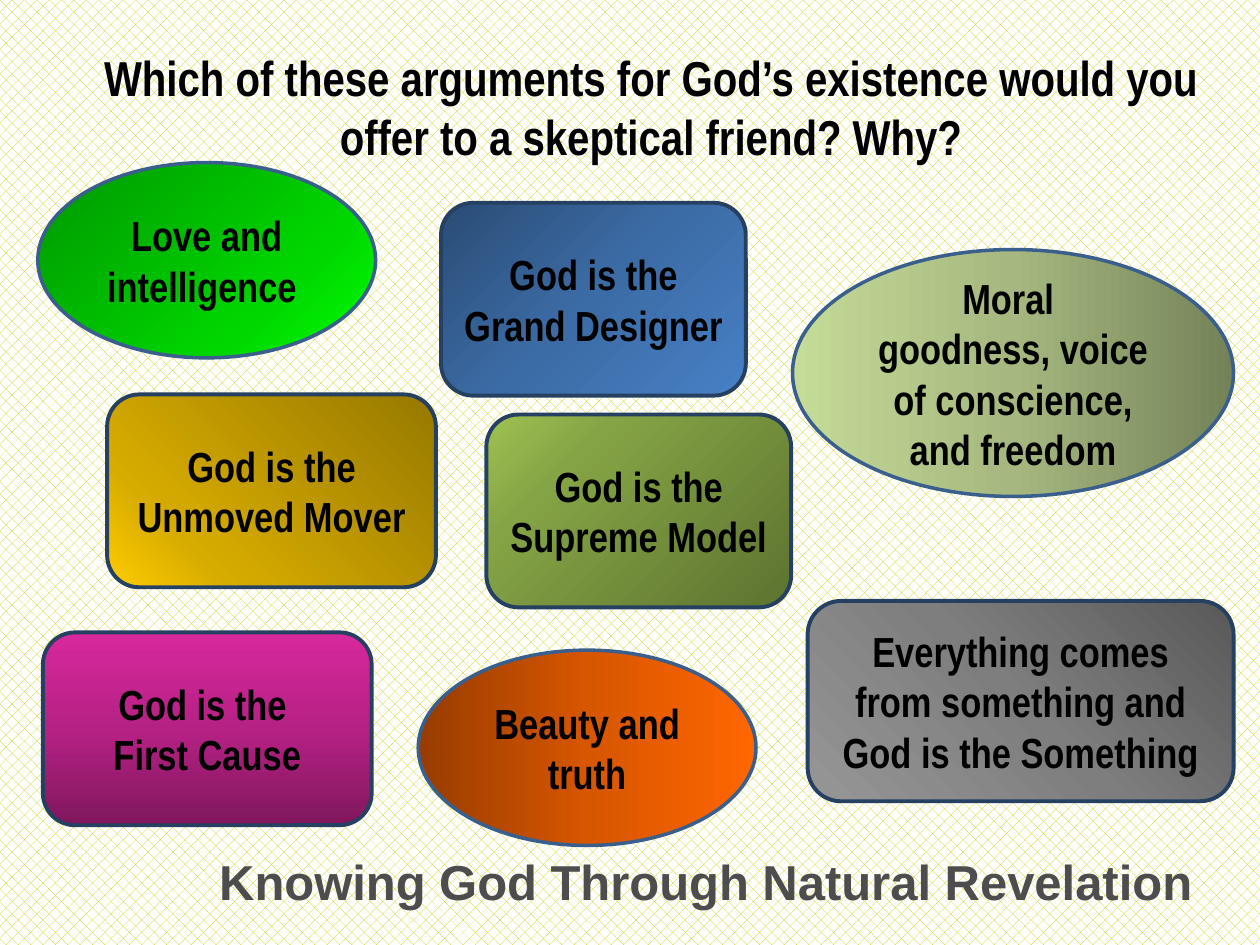
from lxml.etree import SubElement
from pptx import Presentation
from pptx.dml.color import RGBColor
from pptx.enum.dml import MSO_PATTERN
from pptx.enum.shapes import MSO_SHAPE
from pptx.enum.text import MSO_ANCHOR, MSO_AUTO_SIZE, PP_ALIGN
from pptx.oxml.ns import qn
from pptx.util import Pt

BLACK = RGBColor(0x00, 0x00, 0x00)
WHITE = RGBColor(0xFF, 0xFF, 0xFF)
GREY = RGBColor(0x4D, 0x4D, 0x4D)
HATCH = RGBColor(0xCC, 0xCC, 0x00)
NAVY = RGBColor(0x25, 0x40, 0x61)
STEEL = RGBColor(0x3A, 0x5F, 0x8C)

# Gradients: (position in percent, colour) from first to last stop
BLUE = [(0, RGBColor(0x2A, 0x4C, 0x75)), (50, RGBColor(0x3C, 0x6C, 0xA6)),
        (100, RGBColor(0x47, 0x80, 0xC5))]
GOLD = [(0, RGBColor(0x97, 0x79, 0x00)), (76, RGBColor(0xD7, 0xAC, 0x00)),
        (100, RGBColor(0xFF, 0xCC, 0x00))]
OLIVE = [(0, RGBColor(0x5D, 0x73, 0x30)), (74, RGBColor(0x85, 0xA4, 0x45)),
         (100, RGBColor(0x9E, 0xC2, 0x52))]
SILVER = [(0, RGBColor(0x59, 0x59, 0x59)), (50, RGBColor(0x7E, 0x7E, 0x7E)),
          (100, RGBColor(0x96, 0x96, 0x96))]
MAGENTA = [(0, RGBColor(0x80, 0x17, 0x5D)), (50, RGBColor(0xB6, 0x21, 0x84)),
           (100, RGBColor(0xD7, 0x28, 0x9D))]
ORANGE = [(0, RGBColor(0x97, 0x3C, 0x00)), (50, RGBColor(0xD7, 0x56, 0x00)),
          (100, RGBColor(0xFF, 0x66, 0x00))]
SAGE = [(0, RGBColor(0x74, 0x82, 0x59)), (50, RGBColor(0xA6, 0xB8, 0x7F)),
        (100, RGBColor(0xC5, 0xDB, 0x97))]
GREEN = [(0, RGBColor(0x00, 0x97, 0x00)), (70, RGBColor(0x00, 0xD7, 0x00)),
         (100, RGBColor(0x00, 0xFF, 0x00))]


class Painter:
    """Holds the style and the slide being filled."""

    heading = {"name": "Arial Narrow", "size": Pt(28), "bold": True}
    label = {"name": "Arial Narrow", "size": Pt(24), "bold": True}
    footer = {"name": "Arial", "size": Pt(28), "bold": True}
    outlines = {MSO_SHAPE.ROUNDED_RECTANGLE: (NAVY, 2.25),
                MSO_SHAPE.OVAL: (STEEL, 2)}

    def __init__(self, slide):
        self.slide = slide

    def background(self, fore, back):
        fill = self.slide.background.fill
        fill.patterned()
        fill.pattern = MSO_PATTERN.PERCENT_30
        fill.fore_color.rgb = fore
        fill.back_color.rgb = back

    def fill_text(self, frame, text, style, color, align):
        frame.word_wrap = True
        para = frame.paragraphs[0]
        para.text = text
        para.alignment = align
        for span in para.runs:
            for name, value in style.items():
                setattr(span.font, name, value)
            span.font.color.rgb = color
        return para

    def text(self, place, text, style, color, align):
        box = self.slide.shapes.add_textbox(*map(Pt, place))
        box.text_frame.auto_size = MSO_AUTO_SIZE.SHAPE_TO_FIT_TEXT
        return self.fill_text(box.text_frame, text, style, color, align)

    def outline_text(self, para, color, width):
        for span in para.runs:
            properties = span._r.get_or_add_rPr()
            line = SubElement(properties, qn("a:ln"), w=str(Pt(width)))
            solid = SubElement(line, qn("a:solidFill"))
            SubElement(solid, qn("a:srgbClr"), val=str(color))
            properties.insert(0, line)

    def gradient(self, shape, stops, angle):
        """Linear gradient, clockwise; without an angle, round from top left."""
        shape.fill.gradient()
        fill = shape._element.spPr.find(qn("a:gradFill"))
        for child in list(fill):
            fill.remove(child)
        stop_list = SubElement(fill, qn("a:gsLst"))
        for position, color in stops:
            stop = SubElement(stop_list, qn("a:gs"), pos=str(position * 1000))
            SubElement(stop, qn("a:srgbClr"), val=str(color))
        if angle is None:
            circle = SubElement(fill, qn("a:path"), path="circle")
            SubElement(circle, qn("a:fillToRect"), r="100000", b="100000")
        else:
            SubElement(fill, qn("a:lin"), ang=str(angle * 60000), scaled="0")

    def argument(self, kind, place, text, stops, angle):
        shape = self.slide.shapes.add_shape(kind, *map(Pt, place))
        shape.shadow.inherit = False
        self.gradient(shape, stops, angle)
        color, width = self.outlines[kind]
        shape.line.color.rgb = color
        shape.line.width = Pt(width)
        shape.text_frame.vertical_anchor = MSO_ANCHOR.MIDDLE
        self.fill_text(shape.text_frame, text, self.label, BLACK,
                       PP_ALIGN.CENTER)


def main():
    deck = Presentation()
    deck.slide_width, deck.slide_height = Pt(720), Pt(540)
    page = Painter(deck.slides.add_slide(deck.slide_layouts[6]))
    page.background(HATCH, WHITE)

    # Footer and question
    footer = page.text((54, 483.1, 642.2, 63.4),
                       "Knowing God Through Natural Revelation ",
                       page.footer, GREY, PP_ALIGN.RIGHT)
    page.outline_text(footer, WHITE, 0.75)
    page.text((41.8, 23.8, 660.2, 74.9),
              "Which of these arguments for God’s existence would you "
              "offer to a skeptical friend? Why?",
              page.heading, BLACK, PP_ALIGN.CENTER)

    # Arguments in boxes
    for place, text, stops, angle in [
        ((252, 115.9, 174.2, 110.2), "God is the Grand Designer", BLUE, 45),
        ((61.2, 225.4, 187.9, 110.2), "God is the Unmoved Mover", GOLD, 135),
        ((277.9, 236.9, 174.2, 110.2), "God is the Supreme Model", OLIVE, 225),
        ((461.5, 343.4, 243.4, 114.5),
         "Everything comes from something and God is the Something", SILVER, 135),
        ((24.5, 361.4, 187.9, 110.2), "God is the \vFirst Cause", MAGENTA, 270),
    ]:
        page.argument(MSO_SHAPE.ROUNDED_RECTANGLE, place, text, stops, angle)

    # Arguments in ovals
    for place, text, stops, angle in [
        ((239, 371.5, 193, 111.6), "Beauty and truth", ORANGE, 0),
        ((452.9, 142.6, 252, 141.1),
         "Moral \vgoodness, voice of conscience, and freedom", SAGE, 180),
        ((21.6, 92.9, 193, 111.6), "Love and intelligence ", GREEN, None),
    ]:
        page.argument(MSO_SHAPE.OVAL, place, text, stops, angle)

    deck.save("out.pptx")


if __name__ == "__main__":
    main()
